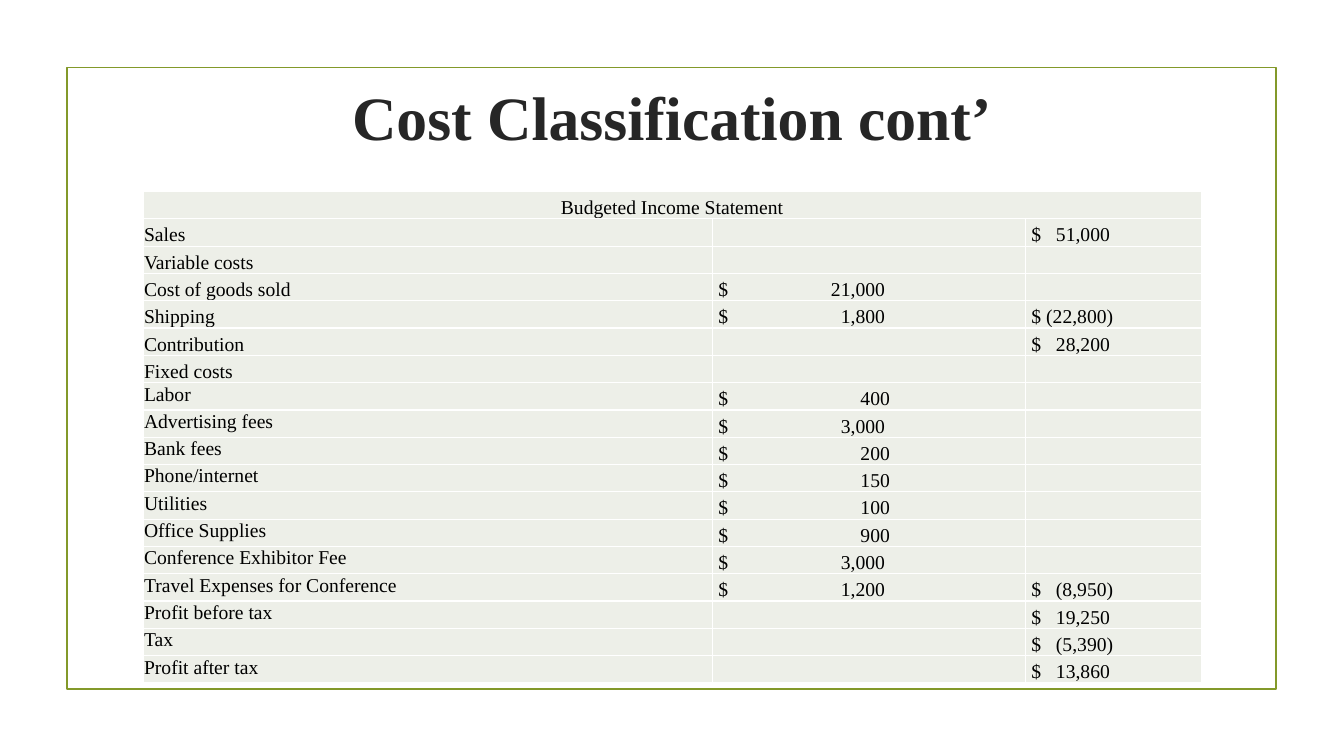
"""Builds the budgeted income statement slide."""
from lxml import etree
from pptx import Presentation
from pptx.dml.color import RGBColor
from pptx.enum.shapes import MSO_SHAPE
from pptx.enum.text import MSO_ANCHOR, PP_ALIGN
from pptx.oxml.ns import qn
from pptx.util import Pt

RECT = MSO_SHAPE.RECTANGLE
TOP, MIDDLE, BOTTOM = MSO_ANCHOR.TOP, MSO_ANCHOR.MIDDLE, MSO_ANCHOR.BOTTOM
LEFT, CENTER = PP_ALIGN.LEFT, PP_ALIGN.CENTER
COLORS = {"frame": "83992A", "title": "262626", "text": "000000",
          "cell": "EDEFE8", "border": "FFFFFF"}
TITLE = {"name": "Times New Roman", "size": Pt(44), "bold": True}
BODY = {"name": "Times New Roman", "size": Pt(14), "bold": False}
COL_WIDTHS = [406.8, 223.6, 125.6]
ROW_HEIGHT = 19.52
FIRST_TOP_ROW = 7
STATEMENT = [
    ("Budgeted Income Statement", "", ""),
    ("Sales", "", "51,000"),
    ("Variable costs", "", ""),
    ("Cost of goods sold", "21,000", ""),
    ("Shipping", "1,800", "(22,800)"),
    ("Contribution", "", "28,200"),
    ("Fixed costs", "", ""),
    ("Labor", "400", ""),
    ("Advertising fees", "3,000", ""),
    ("Bank fees", "200", ""),
    ("Phone/internet", "150", ""),
    ("Utilities", "100", ""),
    ("Office Supplies", "900", ""),
    ("Conference Exhibitor Fee", "3,000", ""),
    ("Travel Expenses for Conference", "1,200", "(8,950)"),
    ("Profit before tax", "", "19,250"),
    ("Tax", "", "(5,390)"),
    ("Profit after tax", "", "13,860"),
]


def write(p, text, align, font, color):
    p.alignment = align
    r = p.add_run()
    r.text = text
    for name, value in font.items():
        setattr(r.font, name, value)
    r.font.color.rgb = RGBColor.from_string(COLORS[color])


def add_tab(p, position, align):
    tabs = etree.SubElement(p._p.get_or_add_pPr(), qn("a:tabLst"))
    etree.SubElement(tabs, qn("a:tab"), pos=str(Pt(position)), algn=align)


prs = Presentation()
prs.slide_width, prs.slide_height = Pt(960), Pt(540)
s = prs.slides.add_slide(prs.slide_layouts[6])

frame = s.shapes.add_shape(RECT, Pt(47.7), Pt(48.2), Pt(864), Pt(444.2))
frame.shadow.inherit = False
frame.fill.background()
frame.line.color.rgb = RGBColor.from_string(COLORS["frame"])
frame.line.width = Pt(1.25)

title = s.shapes.add_textbox(Pt(102.2), Pt(51.8), Pt(756), Pt(62))
tf = title.text_frame
tf.word_wrap = True
tf.vertical_anchor = MIDDLE
write(tf.paragraphs[0], "Cost Classification cont’", CENTER, TITLE, "title")

table = s.shapes.add_table(len(STATEMENT), len(COL_WIDTHS), Pt(102.2), Pt(136.8),
                           Pt(sum(COL_WIDTHS)), Pt(ROW_HEIGHT * len(STATEMENT))).table
table.first_row = table.horz_banding = False
for column, width in zip(table.columns, COL_WIDTHS):
    column.width = Pt(width)
table.cell(0, 0).merge(table.cell(0, 2))

for i, row in enumerate(STATEMENT):
    for j, text in enumerate(row):
        cell = table.cell(i, j)
        cell.margin_left = Pt(4.2 if j else 0.7)
        cell.margin_right = cell.margin_top = Pt(0.7)
        cell.margin_bottom = 0
        cell.vertical_anchor = TOP if j == 0 and i >= FIRST_TOP_ROW else BOTTOM
        for side in ("lnL", "lnR", "lnT", "lnB"):
            ln = etree.SubElement(cell._tc.get_or_add_tcPr(), qn(f"a:{side}"), w=str(Pt(1)))
            fill = etree.SubElement(ln, qn("a:solidFill"))
            etree.SubElement(fill, qn("a:srgbClr"), val=COLORS["border"])
        cell.fill.solid()
        cell.fill.fore_color.rgb = RGBColor.from_string(COLORS["cell"])
        p = cell.text_frame.paragraphs[0]
        if not text:
            etree.SubElement(p._p, qn("a:endParaRPr"), sz="1400")
            continue
        if j == 1:
            add_tab(p, 119 if "," in text else 122.5, "r")
        elif j == 2:
            add_tab(p, 14 if len(text) > 7 else 17.5, "l")
        if j == 2 and len(text) > 7:
            text = f"$ {text}"
        elif j:
            text = f"$\t{text}"
        write(p, text, LEFT if i else CENTER, BODY, "text")

prs.save("out.pptx")
